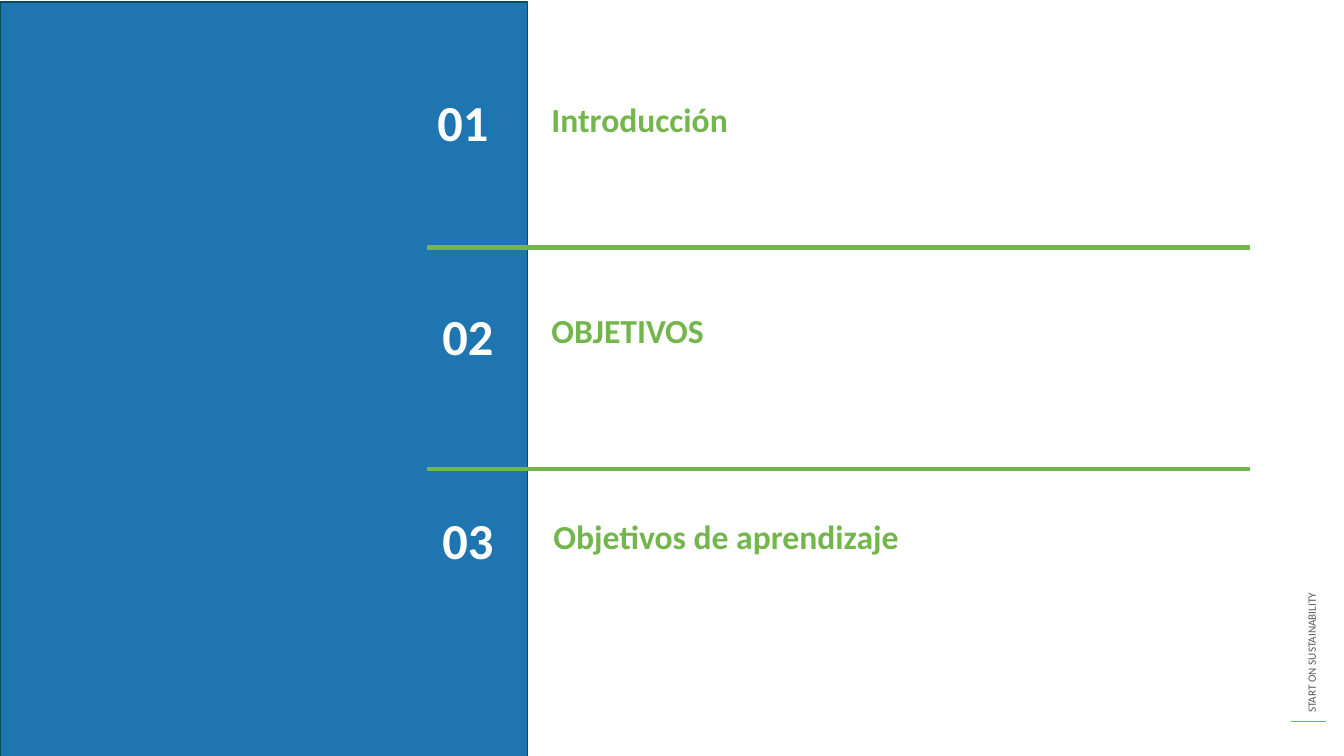
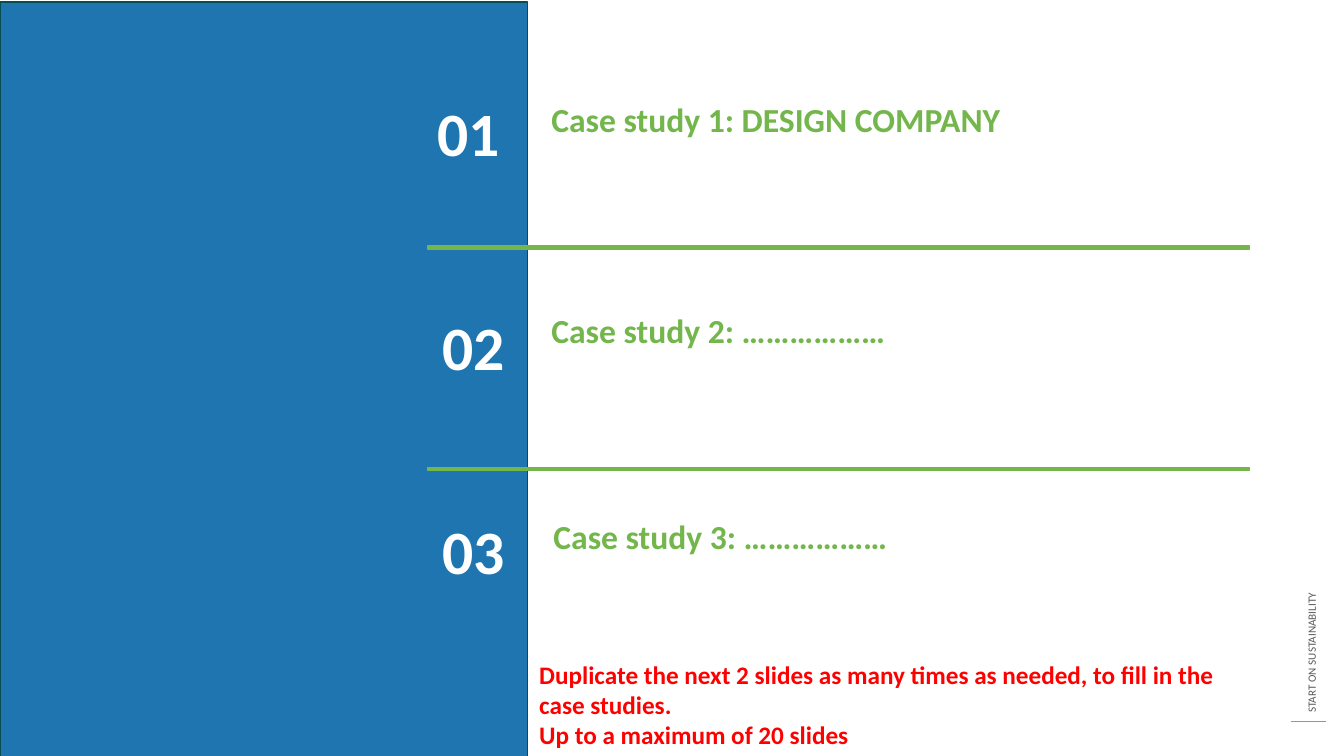
from lxml import etree
from pptx import Presentation
from pptx.dml.color import RGBColor
from pptx.enum.shapes import MSO_CONNECTOR, MSO_SHAPE
from pptx.enum.text import MSO_ANCHOR, PP_ALIGN
from pptx.oxml.ns import qn
from pptx.util import Inches, Pt

RECTANGLE = MSO_SHAPE.RECTANGLE
STRAIGHT = MSO_CONNECTOR.STRAIGHT
TOP = MSO_ANCHOR.TOP
LEFT = PP_ALIGN.LEFT

FONT = "Calibri"
BLUE = "1E75B0"
DARK_TEAL = "054F50"
GREEN = "73B64B"
WHITE = "FFFFFF"
GRAY = "595959"
RED = "FF0000"

FOOTER = "START ON SUSTAINABILITY"
PANEL = (0, 0.02, 5.23, 7.5, BLUE, DARK_TEAL)
DIVIDERS = [(4.24, top, 8.15, 0.03, GREEN, GREEN) for top in (2.44, 4.64)]
ROWS = [(4.24, 0.67, 5.37, 0.93), (4.29, 2.8, 5.37, 3.03), (4.29, 4.82, 5.39, 5.07)]

AGENDAS = [
    (36, ["Introducción", "OBJETIVOS", "Objetivos de aprendizaje"], []),
    (
        44,
        [
            "Case study 1: DESIGN COMPANY",
            "Case study 2: ………………",
            "Case study 3: ………………",
        ],
        [
            "Duplicate the next 2 slides as many times as needed, to fill in the case studies.",
            "Up to a maximum of 20 slides",
        ],
    ),
]


def color(value):
    return RGBColor.from_string(value)


def add_text(page, place, lines, size, ink, bold=True, spacing=1.0):
    box = page.shapes.add_textbox(*[Inches(length) for length in place])
    frame = box.text_frame
    frame.word_wrap = True
    frame.vertical_anchor = TOP
    for index, line in enumerate(lines):
        para = frame.add_paragraph() if index else frame.paragraphs[0]
        para.alignment = LEFT
        para.line_spacing = spacing
        span = para.add_run()
        span.text = line
        span.font.name = FONT
        span.font.size = Pt(size)
        span.font.bold = bold
        span.font.color.rgb = color(ink)
    return box


deck = Presentation()
deck.slide_width = Inches(13.33)
deck.slide_height = Inches(7.5)
blank = deck.slide_layouts[6]

for number_size, titles, note in AGENDAS:
    page = deck.slides.add_slide(blank)

    footer = add_text(page, (10.78, 4.82, 4.46, 0.24), [FOOTER], 8, GRAY, bold=False)
    footer.rotation = 270

    rule = page.shapes.add_connector(
        STRAIGHT, Inches(12.8), Inches(7.16), Inches(13.15), Inches(7.16)
    )
    rule.line.color.rgb = color(GREEN)
    rule.line.width = Pt(1)
    etree.SubElement(rule.element.spPr, qn("a:effectLst"))

    for left, top, width, height, fill, outline in [PANEL, *DIVIDERS]:
        bar = page.shapes.add_shape(
            RECTANGLE, Inches(left), Inches(top), Inches(width), Inches(height)
        )
        bar.shadow.inherit = False
        bar.fill.solid()
        bar.fill.fore_color.rgb = color(fill)
        bar.line.color.rgb = color(outline)
        bar.line.width = Pt(1)

    for number, (title, row) in enumerate(zip(titles, ROWS), start=1):
        number_left, number_top, title_left, title_top = row
        add_text(page, (title_left, title_top, 7.18, 0.37), [title], 24, GREEN)
        add_text(
            page, (number_left, number_top, 1.35, 1.05),
            [f"{number:02d}"], number_size, WHITE, spacing=1.3,
        )

    if note:
        add_text(page, (5.25, 6.49, 7.14, 1.01), note, 18, RED)

deck.save("out.pptx")
